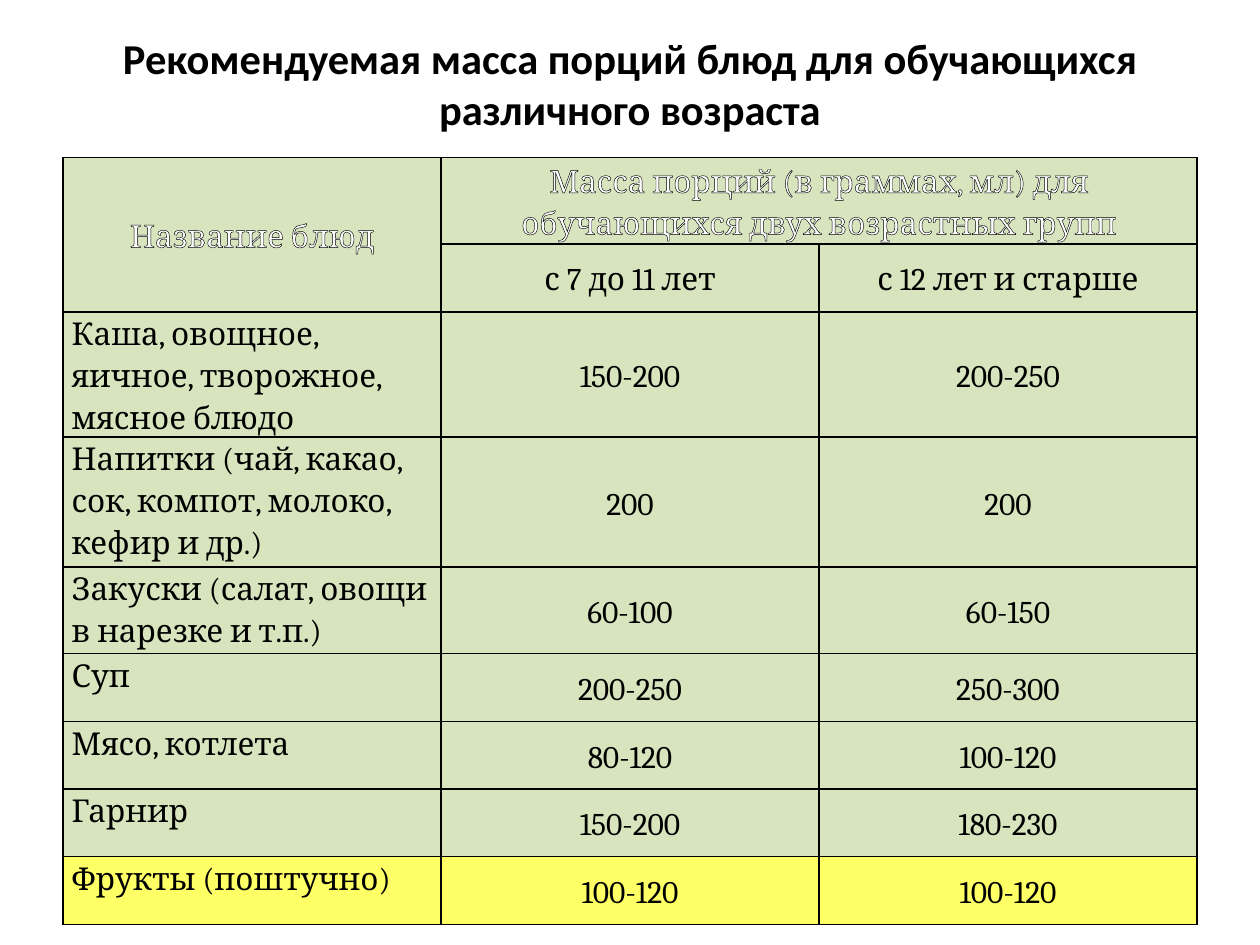
from lxml import etree
from pptx import Presentation
from pptx.dml import color
from pptx.enum import text
from pptx.oxml import ns
from pptx.util import Pt

GREEN, YELLOW, BLACK, WHITE = "D7E4BD", "FFFF66", "000000", "FFFFFF"
TITLE = "Рекомендуемая масса порций блюд для обучающихся различного возраста"
HEADINGS = [
    ("Название блюд",
     "Масса порций (в граммах, мл) для обучающихся двух возрастных групп", ""),
    ("", "с 7 до 11 лет", "с 12 лет и старше"),
]
DISHES = [
    ("Каша, овощное, яичное, творожное, мясное блюдо", "150-200", "200-250"),
    ("Напитки (чай, какао, сок, компот, молоко, кефир и др.)", "200", "200"),
    ("Закуски (салат, овощи в нарезке и т.п.)", "60-100", "60-150"),
    ("Суп", "200-250", "250-300"),
    ("Мясо, котлета", "80-120", "100-120"),
    ("Гарнир", "150-200", "180-230"),
    ("Фрукты (поштучно)", "100-120", "100-120"),
]
ROW_HEIGHTS = [49.5, 38.7, 49.5, 74.2, 49.5] + [38.7] * 4


def rgb(value):
    return color.RGBColor.from_string(value)


def add_line(parent, tag, width, value, index):
    """Insert a solid line element among the children of parent."""
    line = etree.Element(ns.qn(tag), w=str(Pt(width)))
    fill = etree.SubElement(line, ns.qn("a:solidFill"))
    etree.SubElement(fill, ns.qn("a:srgbClr"), val=value)
    parent.insert(index, line)


def write(frame, words, font="Cambria", size=18, fill=BLACK, bold=False,
          align=text.PP_ALIGN.CENTER, spacing=None, outline=None):
    paragraph = frame.paragraphs[0]
    paragraph.alignment = align
    if spacing:
        paragraph.line_spacing = spacing
    run = paragraph.add_run()
    run.text = words
    run.font.name, run.font.size, run.font.bold = font, Pt(size), bold
    run.font.color.rgb = rgb(fill)
    if outline:
        add_line(run._r.get_or_add_rPr(), "a:ln", 0.75, outline, 0)


def place_title(slide, left, top, width, height):
    title = slide.shapes.title
    title.left, title.top = Pt(left), Pt(top)
    title.width, title.height = Pt(width), Pt(height)
    frame = title.text_frame
    frame.word_wrap = True
    frame.auto_size = text.MSO_AUTO_SIZE.NONE
    frame.vertical_anchor = text.MSO_ANCHOR.MIDDLE
    frame.margin_top, frame.margin_bottom = 0, Pt(11.4)
    write(frame, TITLE, font="Calibri", size=24.3, bold=True)


def format_cell(cell, fill, anchor):
    cell.fill.solid()
    cell.fill.fore_color.rgb = rgb(fill)
    cell.vertical_anchor = anchor
    cell.margin_left = cell.margin_right = Pt(5)
    cell.margin_top = cell.margin_bottom = 0
    properties = cell._tc.get_or_add_tcPr()
    for index, side in enumerate(("a:lnL", "a:lnR", "a:lnT", "a:lnB")):
        add_line(properties, side, 1, BLACK, index)


def place_portions(slide, left, top, width, height):
    rows = HEADINGS + DISHES
    table = slide.shapes.add_table(len(rows), 3, Pt(left), Pt(top),
                                   Pt(width), Pt(height)).table
    for column in table.columns:
        column.width = Pt(width / 3)
    for row, row_height in zip(table.rows, ROW_HEIGHTS):
        row.height = Pt(row_height)

    # Merged headings
    table.cell(0, 0).merge(table.cell(1, 0))
    table.cell(0, 1).merge(table.cell(0, 2))

    for r, words_in_row in enumerate(rows):
        fill = YELLOW if r == len(rows) - 1 else GREEN
        for c, words in enumerate(words_in_row):
            cell = table.cell(r, c)
            is_dish = c == 0 and r >= len(HEADINGS)
            format_cell(cell, fill, text.MSO_ANCHOR.TOP if is_dish
                        else text.MSO_ANCHOR.MIDDLE)
            if words:
                write(cell.text_frame, words, spacing=1.15,
                      align=text.PP_ALIGN.LEFT if is_dish
                      else text.PP_ALIGN.CENTER,
                      fill=WHITE if r == 0 else BLACK,
                      outline=BLACK if r == 0 else None)


def main():
    presentation = Presentation()
    presentation.slide_width, presentation.slide_height = Pt(720), Pt(540)
    slide = presentation.slides.add_slide(presentation.slide_layouts[5])
    place_title(slide, 36, 21.6, 648, 62.6)
    place_portions(slide, 36, 90, 648, sum(ROW_HEIGHTS))
    presentation.save("out.pptx")


if __name__ == "__main__":
    main()
